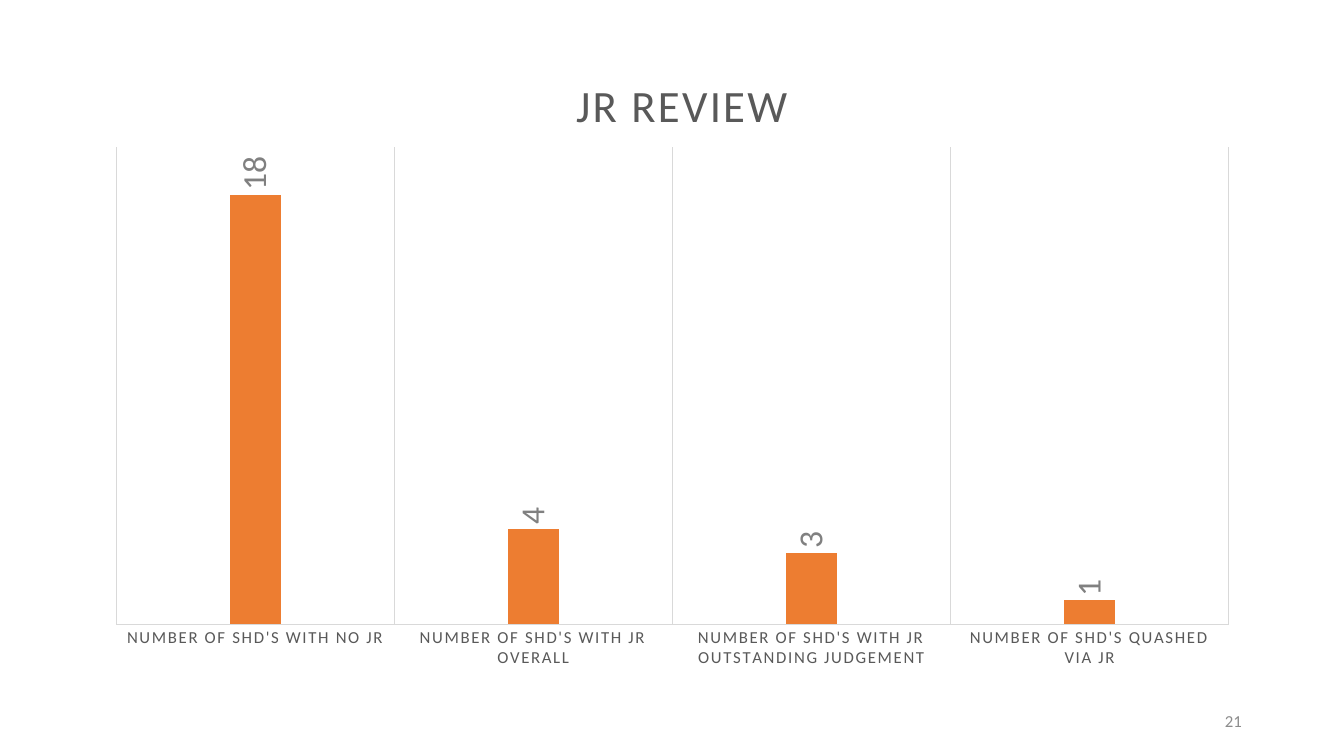
from dataclasses import dataclass

from lxml import etree
from pptx import Presentation
from pptx.chart.chart import Chart
from pptx.chart.data import CategoryChartData
from pptx.dml.color import RGBColor
from pptx.enum.chart import XL_CHART_TYPE, XL_LABEL_POSITION, XL_TICK_LABEL_POSITION, XL_TICK_MARK
from pptx.enum.text import MSO_ANCHOR, PP_ALIGN
from pptx.oxml.ns import qn
from pptx.slide import Slide
from pptx.text.text import Font
from pptx.util import Cm, Pt

COLUMN = XL_CHART_TYPE.COLUMN_CLUSTERED
OUTSIDE_END = XL_LABEL_POSITION.OUTSIDE_END
LABELS_LOW = XL_TICK_LABEL_POSITION.NEXT_TO_AXIS
NO_TICK = XL_TICK_MARK.NONE
MIDDLE = MSO_ANCHOR.MIDDLE
RIGHT = PP_ALIGN.RIGHT


@dataclass(frozen=True)
class Theme:
    font: str = "Calibri"
    text: str = "595959"
    value: str = "808080"
    number: str = "8C8C8C"
    bar: str = "ED7D31"
    rule: str = "D9D9D9"
    title_size: float = 32
    value_size: float = 24
    small_size: float = 12
    base_size: float = 10
    rule_width: float = 0.75


@dataclass(frozen=True)
class Box:
    left: float
    top: float
    width: float
    height: float


@dataclass(frozen=True)
class Outcome:
    label: str
    count: int


THEME = Theme()
CHART_BOX = Box(2.34, 0.84, 29.21, 16.31)
NUMBER_BOX = Box(23.93, 17.65, 7.62, 1.02)
OUTCOMES = [
    Outcome("NUMBER OF SHD'S WITH NO JR", 18),
    Outcome("NUMBER OF SHD'S WITH JR OVERALL", 4),
    Outcome("NUMBER OF SHD'S WITH JR OUTSTANDING JUDGEMENT", 3),
    Outcome("NUMBER OF SHD'S QUASHED VIA JR", 1),
]


def set_font(font: Font, size: float, color: str) -> None:
    font.name = THEME.font
    font.size = Pt(size)
    font.bold = False
    font.color.rgb = RGBColor.from_string(color)


def add_text(s: Slide, text: str, box: Box, *, size: float, color: str, align: PP_ALIGN) -> None:
    sp = s.shapes.add_textbox(Cm(box.left), Cm(box.top), Cm(box.width), Cm(box.height))
    tf = sp.text_frame
    tf.word_wrap = True
    tf.vertical_anchor = MIDDLE
    p = tf.paragraphs[0]
    p.alignment = align
    r = p.add_run()
    r.text = text
    set_font(r.font, size, color)


def set_layout(parent: etree.ElementBase, index: int, **values: float | str) -> None:
    for old in parent.findall(qn("c:layout")):
        parent.remove(old)
    layout = etree.Element(qn("c:layout"))
    manual = etree.SubElement(layout, qn("c:manualLayout"))
    for name, value in values.items():
        etree.SubElement(manual, qn(f"c:{name}")).set("val", str(value))
    parent.insert(index, layout)


def set_attributes(chart: Chart, xpath: str, **values: str) -> None:
    for element in chart.element.xpath(xpath):
        for name, value in values.items():
            element.set(name, value)


def format_title(chart: Chart, text: str) -> None:
    chart.has_title = True
    p = chart.chart_title.text_frame.paragraphs[0]
    r = p.add_run()
    r.text = text
    set_font(r.font, THEME.title_size, THEME.text)
    set_attributes(chart, ".//c:title//a:rPr", spc="150")
    title = chart.element.xpath(".//c:title")[0]
    set_layout(title, 1, xMode="edge", yMode="edge", x=0.41, y=0.05)


def format_axes(chart: Chart) -> None:
    axis = chart.category_axis
    axis.has_major_gridlines = True
    axis.major_tick_mark = axis.minor_tick_mark = NO_TICK
    axis.tick_label_position = LABELS_LOW
    for line in (axis.format.line, axis.major_gridlines.format.line):
        line.color.rgb = RGBColor.from_string(THEME.rule)
        line.width = Pt(THEME.rule_width)
    set_font(axis.tick_labels.font, THEME.small_size, THEME.text)
    set_attributes(chart, ".//c:catAx//a:defRPr", spc="120")
    values = chart.value_axis
    values.minimum_scale, values.maximum_scale = 0, 20
    values.has_major_gridlines = False
    values.visible = False


def format_bars(chart: Chart) -> None:
    plot = chart.plots[0]
    plot.gap_width, plot.overlap = 444, -90
    plot.vary_by_categories = False
    series = plot.series[0]
    series.format.fill.solid()
    series.format.fill.fore_color.rgb = RGBColor.from_string(THEME.bar)
    labels = series.data_labels
    labels.show_value = True
    labels.position = OUTSIDE_END
    set_font(labels.font, THEME.value_size, THEME.value)
    set_attributes(chart, ".//c:dLbls/c:txPr/a:bodyPr", rot="-5400000", vert="horz")


def add_review_chart(s: Slide, box: Box, outcomes: list[Outcome]) -> None:
    data = CategoryChartData()
    data.categories = [outcome.label for outcome in outcomes]
    data.add_series("Series 1", [outcome.count for outcome in outcomes])
    frame = s.shapes.add_chart(
        COLUMN, Cm(box.left), Cm(box.top), Cm(box.width), Cm(box.height), data
    )
    chart = frame.chart
    chart.has_legend = False
    set_font(chart.font, THEME.base_size, "000000")
    format_title(chart, "JR REVIEW")
    format_axes(chart)
    format_bars(chart)
    plot_area = chart.element.xpath(".//c:plotArea")[0]
    set_layout(
        plot_area, 0, layoutTarget="inner", xMode="edge", yMode="edge",
        x=0.02, y=0.176, w=0.96, h=0.737,
    )


def main() -> None:
    prs = Presentation()
    prs.slide_width, prs.slide_height = Cm(33.87), Cm(19.05)
    s = prs.slides.add_slide(prs.slide_layouts[6])
    add_text(s, "21", NUMBER_BOX, size=THEME.small_size, color=THEME.number, align=RIGHT)
    add_review_chart(s, CHART_BOX, OUTCOMES)
    prs.save("out.pptx")


if __name__ == "__main__":
    main()
